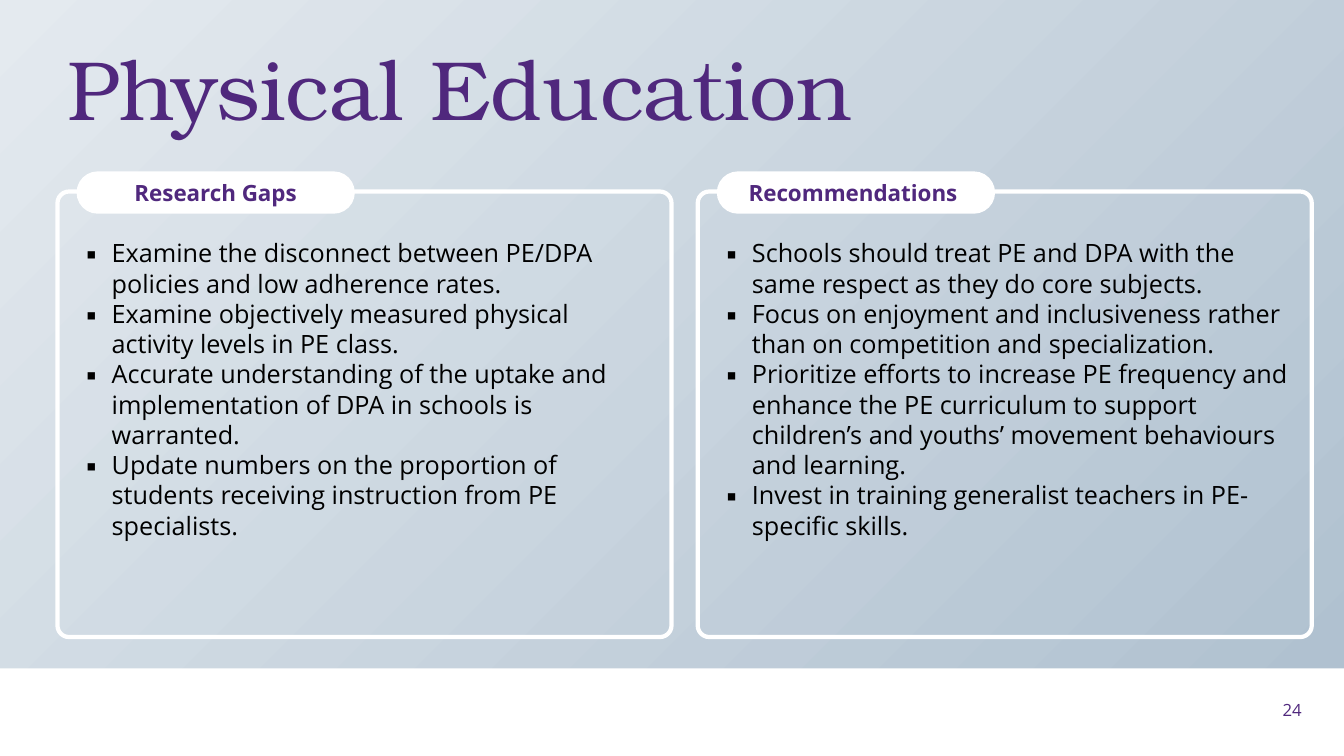
from lxml.etree import SubElement
from pptx import Presentation
from pptx.dml.color import RGBColor
from pptx.enum.shapes import MSO_SHAPE
from pptx.enum.text import MSO_ANCHOR, PP_ALIGN
from pptx.oxml.ns import qn
from pptx.util import Inches, Pt

PURPLE = RGBColor(0x50, 0x28, 0x7D)
WHITE = RGBColor(0xFF, 0xFF, 0xFF)
BLACK = RGBColor(0x00, 0x00, 0x00)
PALE_BLUE = RGBColor(0xE4, 0xEA, 0xEF)
STEEL_BLUE = RGBColor(0xB0, 0xC1, 0xD0)

TITLE_FORMAT = {"name": "TeX Gyre Bonum", "size": Pt(60)}
BODY_FORMAT = {"name": "Open Sans", "size": Pt(18)}
LABEL_FORMAT = {"name": "Open Sans", "size": Pt(16), "bold": True}
NUMBER_FORMAT = {"name": "Open Sans", "size": Pt(12)}

SLIDE_WIDTH, SLIDE_HEIGHT = 13.33, 7.5
BACKDROP_HEIGHT = 6.63
PANEL_LEFT, PANEL_TOP, PANEL_WIDTH, PANEL_HEIGHT = 0.57, 1.9, 6.09, 4.42
PANEL_STEP = 6.35

PANELS = [
    ("Research Gaps", [
        "Examine the disconnect between PE/DPA policies and low adherence rates.",
        "Examine objectively measured physical activity levels in PE class.",
        "Accurate understanding of the uptake and implementation of DPA in schools is warranted.",
        "Update numbers on the proportion of students receiving instruction from PE specialists.",
    ]),
    ("Recommendations ", [
        "Schools should treat PE and DPA with the same respect as they do core subjects.",
        "Focus on enjoyment and inclusiveness rather than on competition and specialization.",
        "Prioritize efforts to increase PE frequency and enhance the PE curriculum to support "
        "children’s and youths’ movement behaviours and learning.",
        "Invest in training generalist teachers in PE-specific skills.",
    ]),
]


def format_font(paragraph, values, color):
    for run in paragraph.runs:
        for name, value in values.items():
            setattr(run.font, name, value)
        run.font.color.rgb = color


def add_plain_shape(slide, kind, left, top, width, height):
    shape = slide.shapes.add_shape(
        kind, Inches(left), Inches(top), Inches(width), Inches(height))
    shape.shadow.inherit = False
    shape.line.fill.background()
    return shape


def add_text(slide, left, top, width, height, lines, values, color, anchor=MSO_ANCHOR.TOP):
    box = slide.shapes.add_textbox(
        Inches(left), Inches(top), Inches(width), Inches(height))
    frame = box.text_frame
    frame.word_wrap = True
    frame.vertical_anchor = anchor
    frame.text = "\n".join(lines)
    for paragraph in frame.paragraphs:
        format_font(paragraph, values, color)
    return frame.paragraphs


def add_bullet(paragraph):
    properties = paragraph._p.get_or_add_pPr()
    properties.set("marL", str(Inches(0.25)))
    properties.set("indent", str(Inches(-0.25)))
    SubElement(properties, qn("a:buFont"), typeface="Open Sans")
    SubElement(properties, qn("a:buChar"), char="▪")


def add_backdrop(slide, width, height):
    backdrop = add_plain_shape(slide, MSO_SHAPE.RECTANGLE, 0, 0, width, height)
    backdrop.fill.gradient()
    backdrop.fill.gradient_angle = 315
    for stop, color in zip(backdrop.fill.gradient_stops, (PALE_BLUE, STEEL_BLUE)):
        stop.color.rgb = color
    footer = add_plain_shape(
        slide, MSO_SHAPE.RECTANGLE, 0, height, width, SLIDE_HEIGHT - height)
    footer.fill.solid()
    footer.fill.fore_color.rgb = WHITE


def add_title(slide, left, top, width, height):
    paragraph = add_text(slide, left, top, width, height, ["Physical Education"],
                         TITLE_FORMAT, PURPLE, MSO_ANCHOR.MIDDLE)[0]
    paragraph.line_spacing = Pt(55)


def add_panel(slide, left, top, width, height, label, points):
    frame = add_plain_shape(slide, MSO_SHAPE.ROUNDED_RECTANGLE, left, top, width, height)
    frame.adjustments[0] = 0.026
    frame.fill.background()
    frame.line.color.rgb = WHITE
    frame.line.width = Pt(3)

    inner_left = left + 0.19
    for paragraph in add_text(slide, inner_left, top + 0.41, width - 0.23, 2.96,
                              points, BODY_FORMAT, BLACK):
        add_bullet(paragraph)

    tab = add_plain_shape(
        slide, MSO_SHAPE.ROUNDED_RECTANGLE, inner_left, top - 0.2, 2.76, 0.42)
    tab.adjustments[0] = 0.5
    tab.fill.solid()
    tab.fill.fore_color.rgb = WHITE
    tab.text_frame.text = label
    tab.text_frame.vertical_anchor = MSO_ANCHOR.MIDDLE
    paragraph = tab.text_frame.paragraphs[0]
    paragraph.alignment = PP_ALIGN.CENTER
    format_font(paragraph, LABEL_FORMAT, PURPLE)


def add_slide_number(slide, left, top, width, height):
    paragraph = add_text(slide, left, top, width, height, ["24"],
                         NUMBER_FORMAT, PURPLE, MSO_ANCHOR.MIDDLE)[0]
    paragraph.alignment = PP_ALIGN.RIGHT


def main():
    presentation = Presentation()
    presentation.slide_width = Inches(SLIDE_WIDTH)
    presentation.slide_height = Inches(SLIDE_HEIGHT)
    slide = presentation.slides.add_slide(presentation.slide_layouts[6])
    add_backdrop(slide, SLIDE_WIDTH, BACKDROP_HEIGHT)
    add_title(slide, 0.57, 0.26, 11.5, 1.45)
    for index, (label, points) in enumerate(PANELS):
        add_panel(slide, PANEL_LEFT + index * PANEL_STEP, PANEL_TOP,
                  PANEL_WIDTH, PANEL_HEIGHT, label, points)
    add_slide_number(slide, 12.54, 6.84, 0.47, 0.4)
    presentation.save("out.pptx")


if __name__ == "__main__":
    main()
